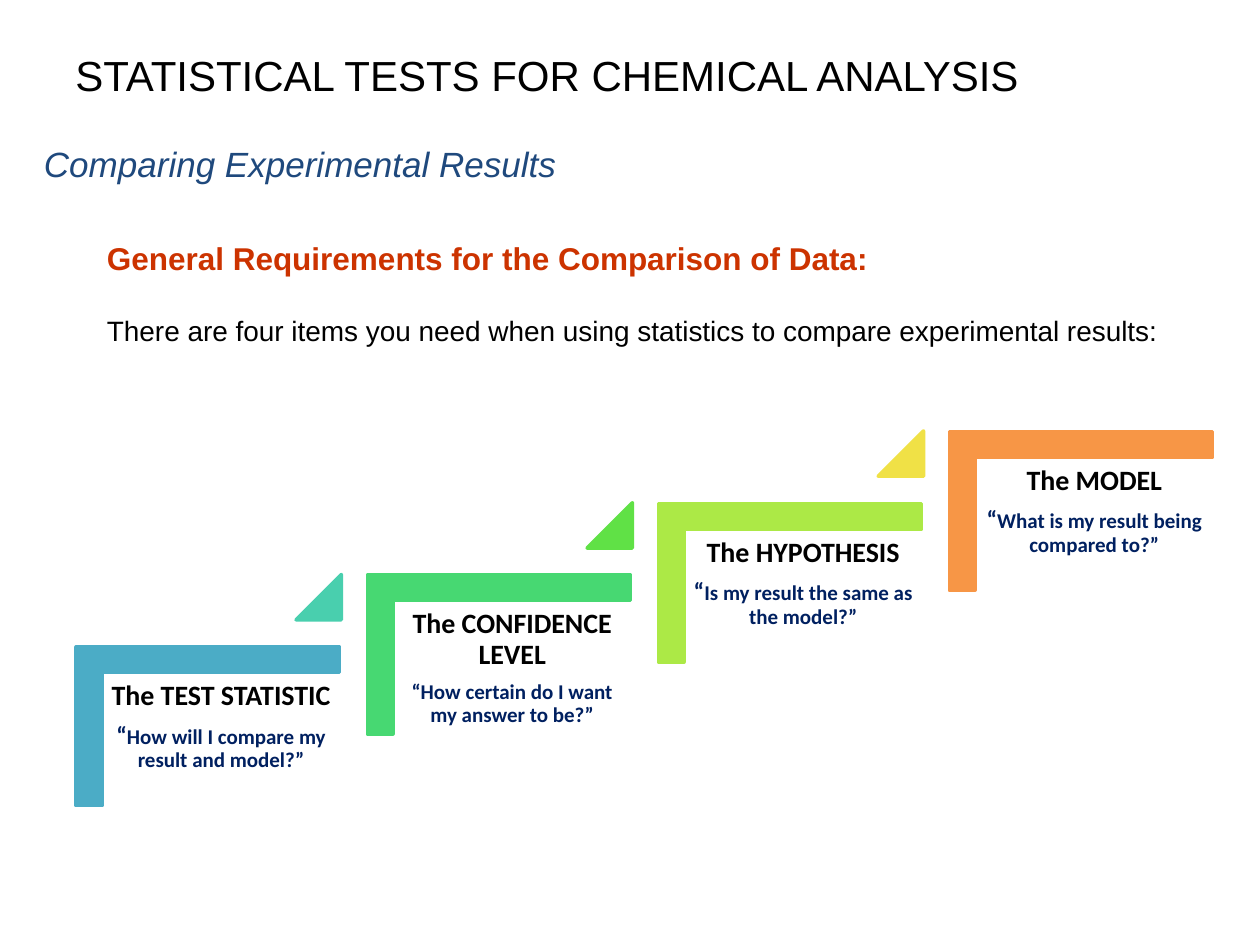
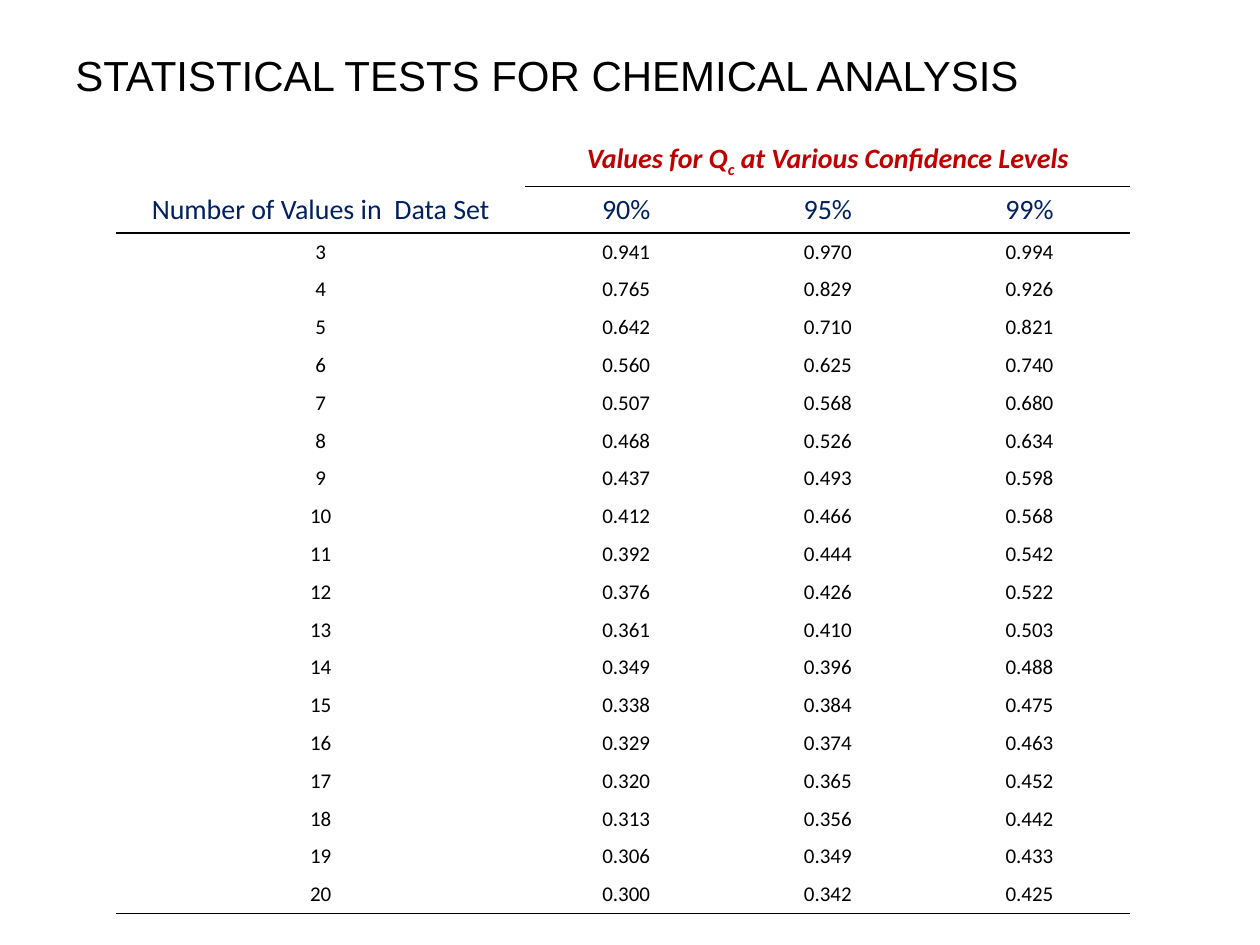
"""Build two slides on statistical tests for chemical analysis."""
from dataclasses import dataclass
from typing import NamedTuple

from lxml.etree import SubElement
from pptx import Presentation
from pptx.dml.color import RGBColor
from pptx.enum.shapes import MSO_SHAPE
from pptx.enum.text import MSO_ANCHOR, PP_ALIGN
from pptx.oxml.ns import qn
from pptx.util import Inches, Pt


class Style(NamedTuple):
    size: int
    color: str
    font: str = "Calibri"
    bold: bool = False
    italic: bool = False
    baseline: int = 0


@dataclass(frozen=True)
class Theme:
    title: Style = Style(24, "000000", "Arial")
    topic: Style = Style(20, "1F497D", "Arial", italic=True)
    heading: Style = Style(18, "CC3300", "Arial", bold=True)
    body: Style = Style(16, "000000", "Arial")
    step_name: Style = Style(16, "000000", bold=True)
    question: Style = Style(12, "002060", bold=True)
    large_quote: Style = Style(14, "002060", bold=True)
    table_title: Style = Style(16, "C00000", bold=True, italic=True)
    table_subscript: Style = Style(16, "C00000", bold=True, italic=True, baseline=-25000)
    column_head: Style = Style(16, "002060")
    value: Style = Style(12, "000000")
    rule: str = "000000"
    no_grid_style: str = "{2D5ABB26-0587-4C30-8999-92F81FD0307C}"


THEME = Theme()
TITLE = "STATISTICAL TESTS FOR CHEMICAL ANALYSIS"

INTRODUCTION = [
    ("Comparing Experimental Results", THEME.topic, 0, 0),
    ("General Requirements for the Comparison of Data:", THEME.heading, 0.5, 31),
    ("There are four items you need when using statistics to compare experimental results:",
     THEME.body, 0.5, 21),
]

STEPS = [
    ("The TEST STATISTIC", THEME.large_quote, "How will I compare my result and model?”",
     "4BACC6", "49CFAE"),
    ("The CONFIDENCE LEVEL", THEME.question, "How certain do I want my answer to be?”",
     "47D872", "60E146"),
    ("The HYPOTHESIS", THEME.large_quote, "Is my result the same as the model?”",
     "ACE946", "F0E146"),
    ("The MODEL", THEME.large_quote, "What is my result being compared to?”",
     "F79646", None),
]

TABLE_TITLE = [
    ("Values for Q", THEME.table_title),
    ("c", THEME.table_subscript),
    (" at Various Confidence Levels", THEME.table_title),
]
COLUMN_HEADS = ["Number of Values in  Data Set", "90%", "95%", "99%"]
FIRST_COUNT = 3
CRITICAL_VALUES = [
    ("0.941", "0.970", "0.994"),
    ("0.765", "0.829", "0.926"),
    ("0.642", "0.710", "0.821"),
    ("0.560", "0.625", "0.740"),
    ("0.507", "0.568", "0.680"),
    ("0.468", "0.526", "0.634"),
    ("0.437", "0.493", "0.598"),
    ("0.412", "0.466", "0.568"),
    ("0.392", "0.444", "0.542"),
    ("0.376", "0.426", "0.522"),
    ("0.361", "0.410", "0.503"),
    ("0.349", "0.396", "0.488"),
    ("0.338", "0.384", "0.475"),
    ("0.329", "0.374", "0.463"),
    ("0.320", "0.365", "0.452"),
    ("0.313", "0.356", "0.442"),
    ("0.306", "0.349", "0.433"),
    ("0.300", "0.342", "0.425"),
]
COLUMN_WIDTHS = [3.25, 1.6, 1.6, 1.6]
ROW_HEIGHTS = [0.4, 0.37] + [0.3] * len(CRITICAL_VALUES)


def box(left, top, width, height):
    return Inches(left), Inches(top), Inches(width), Inches(height)


def add_runs(paragraph, runs):
    for text, style in runs:
        run = paragraph.add_run()
        run.text = text
        font = run.font
        font.name, font.size = style.font, Pt(style.size)
        font.bold, font.italic = style.bold, style.italic
        font.color.rgb = RGBColor.from_string(style.color)
        if style.baseline:
            run._r.get_or_add_rPr().set("baseline", str(style.baseline))


def add_text_frame(shapes, position):
    frame = shapes.add_textbox(*box(*position)).text_frame
    frame.word_wrap = True
    return frame


def add_paragraph(frame, index):
    return frame.add_paragraph() if index else frame.paragraphs[0]


def add_titled_slide(presentation):
    slide = presentation.slides.add_slide(presentation.slide_layouts[6])
    frame = add_text_frame(slide.shapes, (0.5, 0.08, 9, 0.75))
    frame.vertical_anchor = MSO_ANCHOR.MIDDLE
    frame.margin_top = Inches(0.32)
    add_runs(frame.paragraphs[0], [(TITLE, THEME.title)])
    return slide


def add_colored_shape(shapes, kind, position, color, adjustments):
    shape = shapes.add_shape(kind, *box(*position))
    shape.shadow.inherit = False
    shape.fill.solid()
    shape.fill.fore_color.rgb = RGBColor.from_string(color)
    shape.line.color.rgb = RGBColor.from_string(color)
    shape.line.width = Pt(2)
    for index, adjustment in enumerate(adjustments):
        shape.adjustments[index] = adjustment
    return shape


def add_step(shapes, index, step):
    name, quote_style, question, corner_color, triangle_color = step
    left, top = 1.02 + 2.31 * index, 4.72 - 0.57 * index
    corner = add_colored_shape(shapes, MSO_SHAPE.CORNER, (left, top, 1.26, 2.09),
                               corner_color, (0.161, 0.161))
    corner.rotation = 90
    frame = add_text_frame(shapes, (left - 0.21, top + 0.62, 1.89, 1.66))
    frame.margin_left = frame.margin_right = Inches(0.07)
    frame.margin_top = frame.margin_bottom = Inches(0.07)
    lines = [[(name, THEME.step_name)], [("“", quote_style), (question, THEME.question)]]
    for line_index, runs in enumerate(lines):
        paragraph = add_paragraph(frame, line_index)
        paragraph.alignment = PP_ALIGN.CENTER
        paragraph.line_spacing = 0.9
        paragraph.space_after = Pt(6.5)
        add_runs(paragraph, runs)
    if triangle_color:
        add_colored_shape(shapes, MSO_SHAPE.ISOSCELES_TRIANGLE,
                          (left + 1.33, top - 0.16, 0.36, 0.36), triangle_color, (1,))


def build_requirements_slide(presentation):
    slide = add_titled_slide(presentation)
    frame = add_text_frame(slide.shapes, (0.25, 1.08, 9.59, 1.75))
    for index, (text, style, indent, space_before) in enumerate(INTRODUCTION):
        paragraph = add_paragraph(frame, index)
        paragraph.space_before = Pt(space_before)
        paragraph._p.get_or_add_pPr().set("marL", str(Inches(indent)))
        add_runs(paragraph, [(text, style)])
    staircase = slide.shapes.add_group_shape()
    for index, step in enumerate(STEPS):
        add_step(staircase.shapes, index, step)


def fill_cell(cell, runs):
    cell.vertical_anchor = MSO_ANCHOR.MIDDLE
    cell.margin_top = cell.margin_bottom = Inches(0.03)
    paragraph = cell.text_frame.paragraphs[0]
    paragraph.alignment = PP_ALIGN.CENTER
    add_runs(paragraph, runs)


def add_bottom_rule(cell):
    properties = cell._tc.get_or_add_tcPr()
    line = SubElement(properties, qn("a:lnB"), w=str(Pt(1)))
    fill = SubElement(line, qn("a:solidFill"))
    SubElement(fill, qn("a:srgbClr"), val=THEME.rule)
    properties.insert(0, line)


def build_table_slide(presentation):
    slide = add_titled_slide(presentation)
    position = box(0.92, 1.08, sum(COLUMN_WIDTHS), sum(ROW_HEIGHTS))
    table = slide.shapes.add_table(len(ROW_HEIGHTS), len(COLUMN_WIDTHS), *position).table
    table.first_row = table.horz_banding = False
    table._tbl.tblPr.find(qn("a:tableStyleId")).text = THEME.no_grid_style
    for column, width in zip(table.columns, COLUMN_WIDTHS):
        column.width = Inches(width)
    for row, height in zip(table.rows, ROW_HEIGHTS):
        row.height = Inches(height)

    table.cell(0, 1).merge(table.cell(0, 3))
    value_rows = [(str(count), *values)
                  for count, values in enumerate(CRITICAL_VALUES, FIRST_COUNT)]
    rows = [[[], TABLE_TITLE, [], []], [[(head, THEME.column_head)] for head in COLUMN_HEADS]]
    rows += [[[(value, THEME.value)] for value in values] for values in value_rows]
    last_row = len(rows) - 1
    for row_index, row in enumerate(rows):
        for column_index, runs in enumerate(row):
            cell = table.cell(row_index, column_index)
            cell.fill.background()
            fill_cell(cell, runs)
            if row_index in (1, last_row) or (row_index == 0 and column_index > 0):
                add_bottom_rule(cell)


def main():
    presentation = Presentation()
    presentation.slide_width, presentation.slide_height = Inches(10), Inches(7.5)
    build_requirements_slide(presentation)
    build_table_slide(presentation)
    presentation.save("out.pptx")


if __name__ == "__main__":
    main()
